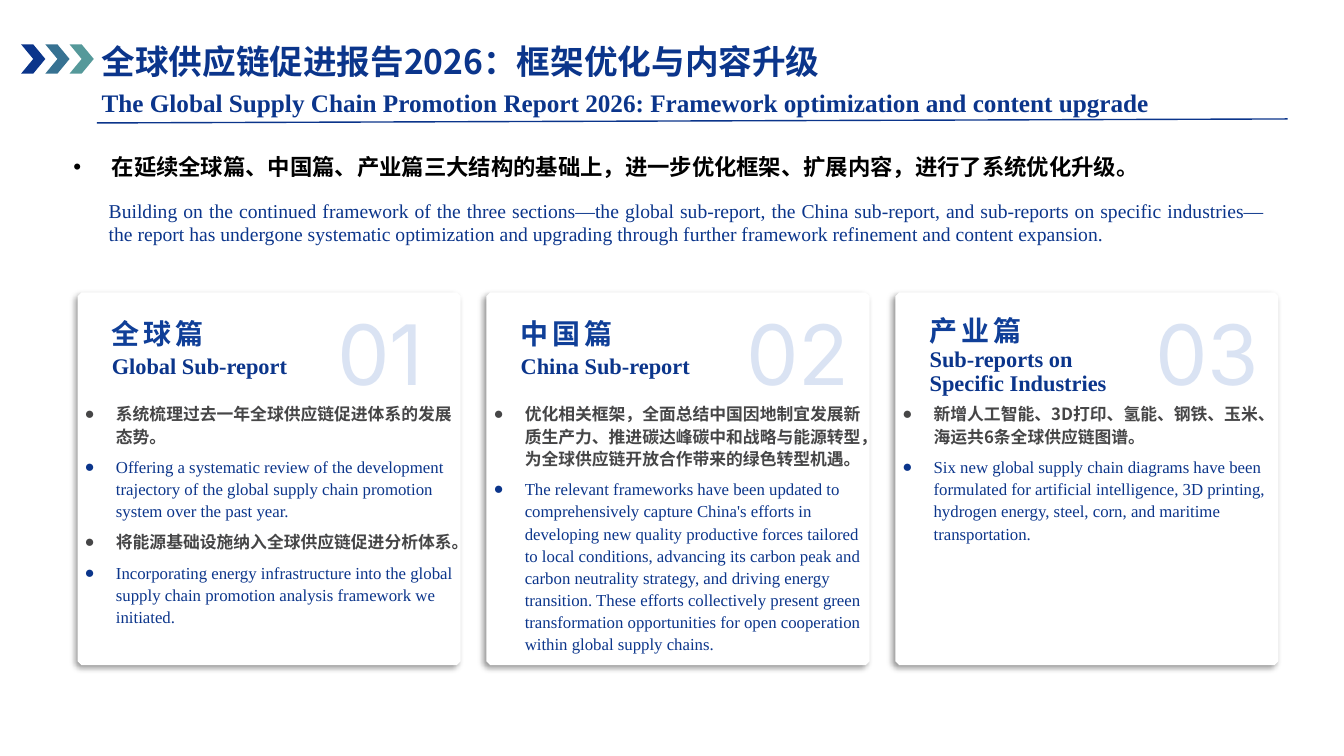
import lxml.etree
import pptx
import pptx.dml.color
import pptx.enum.shapes
import pptx.enum.text
import pptx.oxml.ns
import pptx.util

Inches = pptx.util.Inches
Pt = pptx.util.Pt
qn = pptx.oxml.ns.qn
ALIGN = pptx.enum.text.PP_ALIGN
ANCHOR = pptx.enum.text.MSO_ANCHOR
SHAPE = pptx.enum.shapes.MSO_SHAPE

CJK = "Noto Sans CJK SC"
SERIF = "Times New Roman"
COLORS = {
    "navy": "0B358B", "heading": "103F98", "steel": "377292", "teal": "55999A",
    "pale": "DAE3F3", "gray": "464647", "black": "000000", "white": "FFFFFF",
}
CARD_LEFT, CARD_TOP, CARD_STEP = 0.77, 2.9, 4.055
CARD_WIDTH, CARD_HEIGHT, CORNER = 3.8, 3.7, 0.04

# Chinese heading, English heading, heading box (top, width, height),
# heading line spacings, alternating Chinese and English points
CARDS = [
    ("全球篇", "Global Sub-report", (3.06, 2.16, 0.77), (1, 1), [
        "系统梳理过去一年全球供应链促进体系的发展态势。",
        "Offering a systematic review of the development trajectory of the global "
        "supply chain promotion system over the past year.",
        "将能源基础设施纳入全球供应链促进分析体系。",
        "Incorporating energy infrastructure into the global supply chain promotion "
        "analysis framework we initiated.",
    ]),
    ("中国篇", "China Sub-report", (3.06, 2.16, 0.77), (1, 1), [
        "优化相关框架，全面总结中国因地制宜发展新质生产力、推进碳达峰碳中和战略与能源转型，"
        "为全球供应链开放合作带来的绿色转型机遇。",
        "The relevant frameworks have been updated to comprehensively capture China's "
        "efforts in developing new quality productive forces tailored to local conditions, "
        "advancing its carbon peak and carbon neutrality strategy, and driving energy "
        "transition. These efforts collectively present green transformation opportunities "
        "for open cooperation within global supply chains.",
    ]),
    ("产业篇", "Sub-reports on\vSpecific Industries", (3.04, 2.52, 0.92), (1.1, 0.9), [
        "新增人工智能、3D打印、氢能、钢铁、玉米、海运共6条全球供应链图谱。",
        "Six new global supply chain diagrams have been formulated for artificial "
        "intelligence, 3D printing, hydrogen energy, steel, corn, and maritime "
        "transportation.",
    ]),
]


def rgb(name):
    return pptx.dml.color.RGBColor.from_string(COLORS[name])


def add_shadow(effects):
    """Put a soft shadow towards the lower left in an effect list."""
    shadow = lxml.etree.SubElement(
        effects, qn("a:outerShdw"), blurRad=str(Pt(4)), dist=str(Pt(3)),
        dir=str(135 * 60000), algn="tr", rotWithShape="0")
    color = lxml.etree.SubElement(shadow, qn("a:srgbClr"), val=COLORS["black"])
    lxml.etree.SubElement(color, qn("a:alpha"), val="40000")


def add_box(page, left, top, width, height, insets=(0.1, 0.05, 0.1, 0.05), anchor=ANCHOR.TOP):
    box = page.shapes.add_textbox(Inches(left), Inches(top), Inches(width), Inches(height))
    frame = box.text_frame
    frame.word_wrap = True
    frame.vertical_anchor = anchor
    (frame.margin_left, frame.margin_top,
     frame.margin_right, frame.margin_bottom) = map(Inches, insets)
    return frame


def write(frame, text, *, size, font, color, bold=False, align=ALIGN.LEFT, line=1,
          before=0, bullet=None, margin=0, indent=0, tracking=0, shadow=False):
    """Write one paragraph, in the empty first one if there is one."""
    first = not frame.text
    para = frame.paragraphs[0] if first else frame.add_paragraph()
    para.text = text
    para.alignment = align
    para.line_spacing = line
    para.space_before = Pt(0 if first else before)
    props = para._p.get_or_add_pPr()
    props.set("marL", str(Inches(margin)))
    props.set("indent", str(Inches(indent)))
    if bullet:
        lxml.etree.SubElement(props, qn("a:buFont"), typeface="Arial")
        lxml.etree.SubElement(props, qn("a:buChar"), char=bullet)
    for span in para.runs:
        span.font.size = Pt(size)
        span.font.bold = bold
        span.font.color.rgb = rgb(color)
        span.font.name = font
        span_props = span._r.get_or_add_rPr()
        span_props.set("spc", str(round(tracking * 100)))
        latin = span_props.find(qn("a:latin"))
        east_asian = lxml.etree.Element(qn("a:ea"), typeface=font)
        latin.addnext(east_asian)
        if shadow:
            effects = lxml.etree.Element(qn("a:effectLst"))
            latin.addprevious(effects)
            add_shadow(effects)


def add_chevron(page, left, color):
    chevron = page.shapes.add_shape(
        SHAPE.CHEVRON, Inches(left), Inches(0.44), Inches(0.24), Inches(0.29))
    chevron.shadow.inherit = False
    chevron.fill.solid()
    chevron.fill.fore_color.rgb = rgb(color)
    chevron.line.fill.background()


def add_panel(page, left):
    """Draw a white card with cut corners and a shadow."""
    right, bottom = left + CARD_WIDTH, CARD_TOP + CARD_HEIGHT
    corners = [
        (left + CORNER, CARD_TOP), (right - CORNER, CARD_TOP),
        (right, CARD_TOP + CORNER), (right, bottom - CORNER),
        (right - CORNER, bottom), (left + CORNER, bottom),
        (left, bottom - CORNER), (left, CARD_TOP + CORNER),
    ]
    points = [(Inches(x), Inches(y)) for x, y in corners]
    builder = page.shapes.build_freeform(*points[0])
    builder.add_line_segments(points[1:], close=True)
    panel = builder.convert_to_shape()
    panel.fill.solid()
    panel.fill.fore_color.rgb = rgb("white")
    panel.line.fill.background()
    panel.shadow.inherit = False
    add_shadow(panel._element.spPr.find(qn("a:effectLst")))


def add_card(page, index, chinese, english, heading_place, spacings, points):
    left = CARD_LEFT + index * CARD_STEP
    add_panel(page, left)

    number = add_box(page, left + 2.57, 2.98, 1.24, 1.02, (0, 0.02, 0, 0))
    write(number, f"{index + 1:02}", size=59.5, font="Inter", color="pale",
          margin=0.01, tracking=-0.2, shadow=True)

    top, width, height = heading_place
    heading = add_box(page, left + 0.33, top, width, height, (0, 0.01, 0, 0), ANCHOR.MIDDLE)
    write(heading, chinese, size=20, font=CJK, color="heading", bold=True,
          line=spacings[0], margin=0.01, tracking=2.8)
    write(heading, english, size=16, font=SERIF, color="navy", bold=True,
          line=spacings[1], before=1.1, margin=0.01)

    body = add_box(page, left, 3.94, 3.81, 2.62, (0.05, 0.05, 0.05, 0.05))
    for order, point in enumerate(points):
        is_chinese = order % 2 == 0
        write(body, point, size=12, font=CJK if is_chinese else SERIF,
              color="gray" if is_chinese else "navy", bold=is_chinese,
              line=1.1, before=6, bullet="●", margin=0.33, indent=-0.31)


def add_header(page):
    title = add_box(page, 0.91, 0.28, 11.76, 0.94)
    write(title, "全球供应链促进报告2026：框架优化与内容升级",
          size=24, font=CJK, color="navy", bold=True, line=1.2)
    write(title, "The Global Supply Chain Promotion Report 2026: "
          "Framework optimization and content upgrade",
          size=18, font=SERIF, color="navy", bold=True, line=1.2)
    rule = page.shapes.add_connector(
        pptx.enum.shapes.MSO_CONNECTOR.STRAIGHT,
        Inches(0.96), Inches(1.22), Inches(12.77), Inches(1.18))
    rule.line.color.rgb = rgb("navy")
    rule.line.width = Pt(1)
    lxml.etree.SubElement(rule._element.spPr, qn("a:effectLst"))
    for index, color in enumerate(("navy", "steel", "teal")):
        add_chevron(page, 0.21 + index * 0.24, color)


def add_summary(page):
    chinese = add_box(page, 0.63, 1.33, 12.1, 0.59, anchor=ANCHOR.MIDDLE)
    write(chinese, "在延续全球篇、中国篇、产业篇三大结构的基础上，进一步优化框架、扩展内容，"
          "进行了系统优化升级。", size=16, font=CJK, color="black", bold=True,
          align=ALIGN.JUSTIFY, line=1.2, bullet="•", margin=0.38, indent=-0.38)
    english = add_box(page, 0.98, 1.92, 11.67, 0.57)
    write(english, "Building on the continued framework of the three sections—the global "
          "sub-report, the China sub-report, and sub-reports on specific industries—the "
          "report has undergone systematic optimization and upgrading through further "
          "framework refinement and content expansion.",
          size=14, font=SERIF, color="navy", align=ALIGN.JUSTIFY)


def main():
    deck = pptx.Presentation()
    deck.slide_width, deck.slide_height = Inches(13.33), Inches(7.5)
    page = deck.slides.add_slide(deck.slide_layouts[6])
    add_header(page)
    add_summary(page)
    for index, card in enumerate(CARDS):
        add_card(page, index, *card)
    deck.save("out.pptx")


if __name__ == "__main__":
    main()
